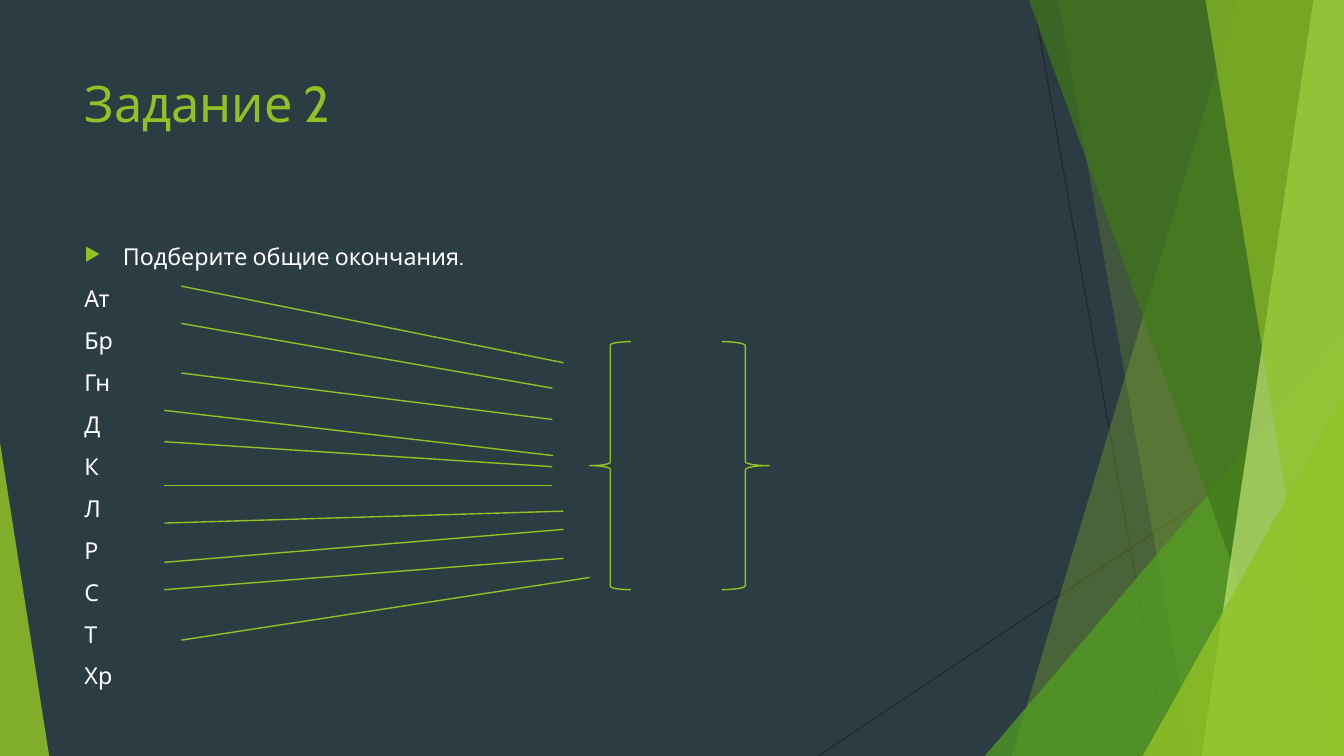
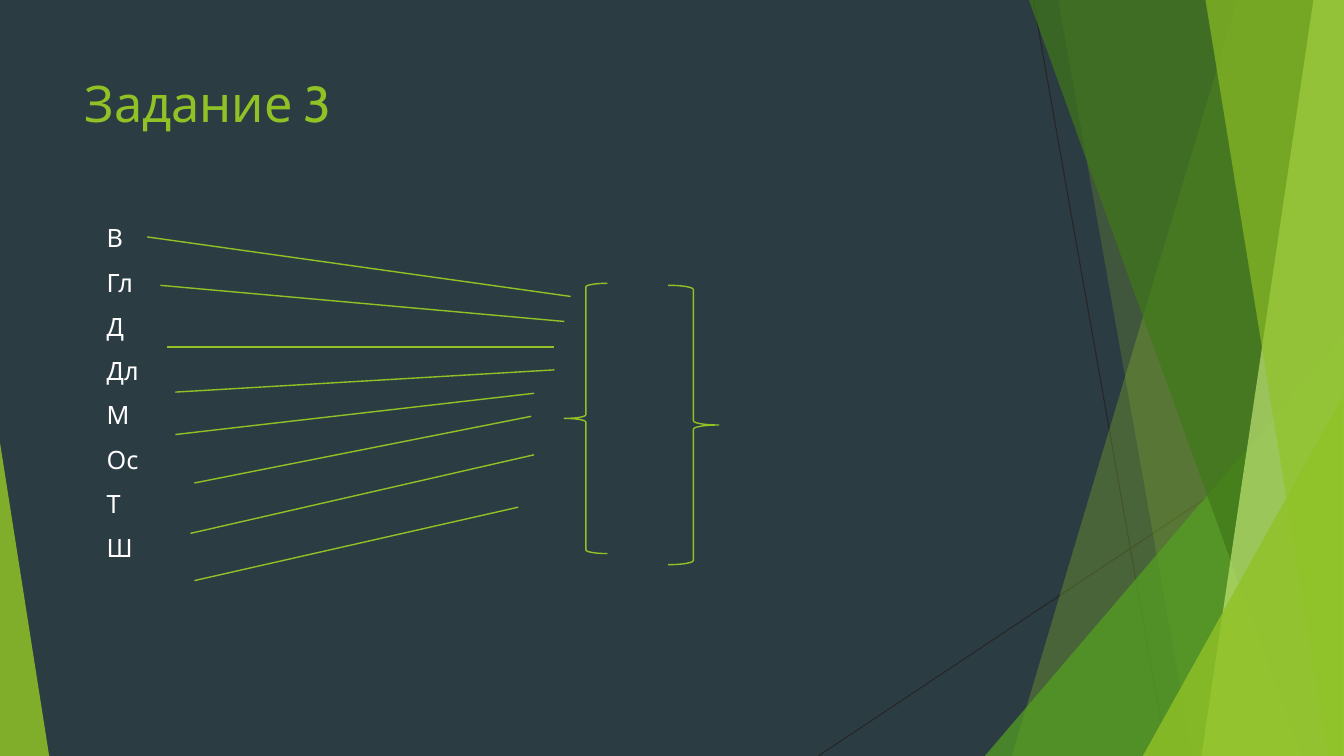
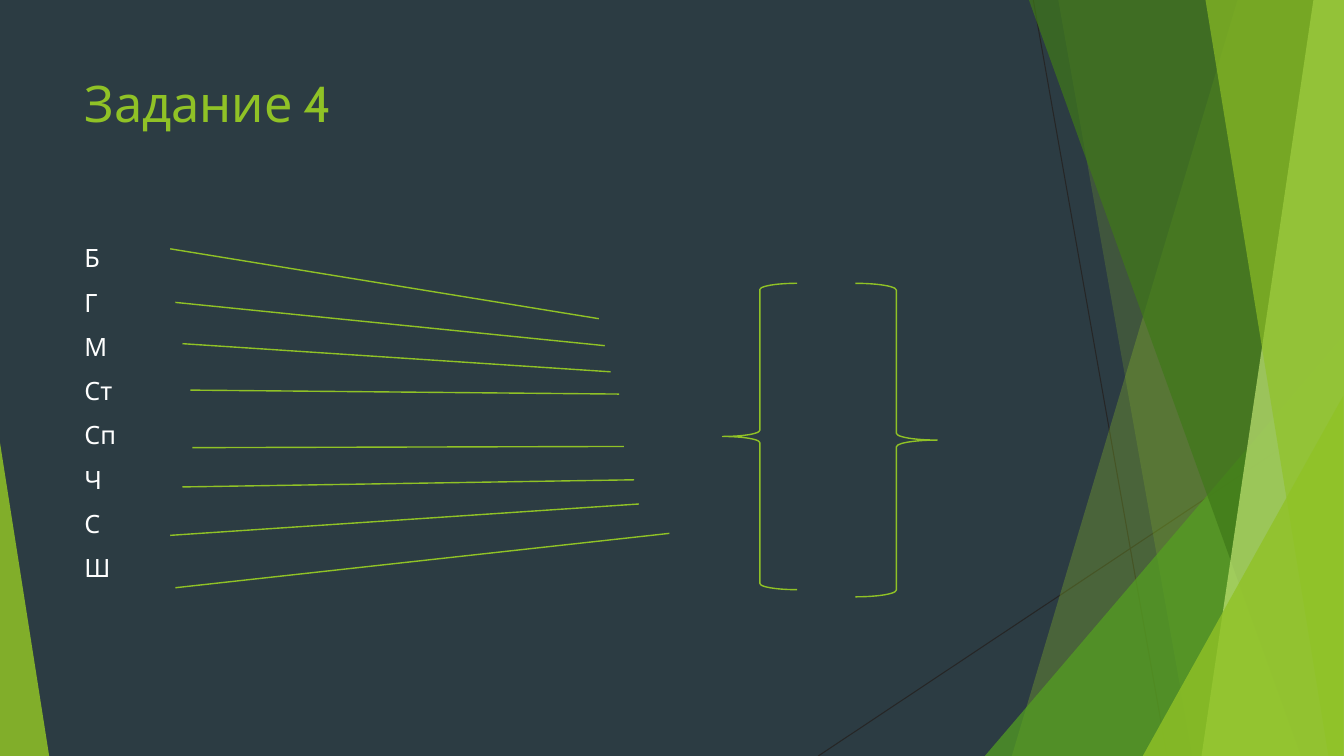
from lxml.etree import SubElement
from pptx import Presentation
from pptx.dml.color import RGBColor
from pptx.enum.shapes import MSO_CONNECTOR, MSO_SHAPE
from pptx.oxml.ns import qn
from pptx.util import Cm, Pt

FONT = "Cabin"
SLATE = RGBColor(0x2C, 0x3C, 0x43)
CHARCOAL = RGBColor(0x26, 0x26, 0x26)
WHITE = RGBColor(0xFF, 0xFF, 0xFF)
LIME = RGBColor(0x90, 0xC2, 0x26)
GREEN = RGBColor(0x54, 0xA0, 0x21)
FOREST = RGBColor(0x3F, 0x78, 0x19)
PALE_LIME = RGBColor(0xC0, 0xE4, 0x74)

WIDTH, HEIGHT = 33.87, 19.05

# Background rays: x1, y1, x2, y2
RAYS = [(26.04, 0, 29.41, HEIGHT), (WIDTH, 10.24, 20.62, HEIGHT)]

# Background facets, back to front: geometry, colour, opacity in percent.
# Two numbers: the top and bottom x of a band that runs to the right edge.
# Five numbers: left, top, width, height and apex position of a triangle.
FACETS = [
    ((31.19, 25.5), LIME, 30),
    ((26.67, 30.05), LIME, 20),
    ((24.82, 8.46, 9.04, 10.59, 1), GREEN, 72),
    ((25.93, 32.79), FOREST, 70),
    ((33.1, 30.28), PALE_LIME, 70),
    ((30.38, 33.48), LIME, 65),
    ((28.8, 9.98, 5.05, 9.07, 1), LIME, 80),
    ((0, 11.15, 1.24, 7.9, 0), LIME, 85),
]

TITLE_BOX = (1.88, 1.7, 23.88, 3.66)
BODY_BOX = (1.88, 5.99, 23.88, 10.77)

# Each task: links as x1, y1, x2, y2; braces as left, top, width, height
TASKS = [
    {
        "title": "Задание 2",
        "prompt": "Подберите общие окончания.",
        "beginnings": ["Ат", "Бр", "Гн", "Д", "К", "Л", "Р", "С", "Т", "Хр"],
        "box": BODY_BOX,
        "size": 16.6,
        "links": [
            (4.57, 7.21, 14.2, 9.14),
            (4.57, 8.15, 13.92, 9.78),
            (4.57, 9.4, 13.92, 10.57),
            (4.14, 10.34, 13.94, 11.48),
            (4.14, 11.13, 13.92, 11.76),
            (4.14, 12.24, 13.92, 12.24),
            (4.14, 13.18, 14.2, 12.88),
            (4.14, 14.17, 14.2, 13.34),
            (4.14, 14.86, 14.2, 14.07),
            (4.57, 16.13, 14.86, 14.55),
        ],
        "braces": [(14.86, 8.61, 1.04, 6.25), (18.19, 8.61, 1.19, 6.25)],
    },
    {
        "title": "Задание 3",
        "prompt": None,
        "beginnings": ["В", "Гл", "Д", "Дл", "М", "Ос", "Т", "Ш"],
        "box": (2.44, 5.49, 24.84, 11.66),
        "size": 18,
        "links": [
            (3.71, 5.97, 14.38, 7.47),
            (4.04, 7.19, 14.22, 8.1),
            (4.22, 8.74, 13.97, 8.74),
            (4.42, 9.88, 13.97, 9.32),
            (4.42, 10.95, 13.46, 9.91),
            (4.9, 12.17, 13.39, 10.49),
            (4.8, 13.44, 13.46, 11.46),
            (4.9, 14.63, 13.06, 12.78),
        ],
        "braces": [(14.22, 7.14, 1.09, 6.81), (16.84, 7.19, 1.27, 7.04)],
    },
    {
        "title": "Задание 4",
        "prompt": None,
        "beginnings": ["Б", "Г", "М", "Ст", "Сп", "Ч", "С", "Ш"],
        "box": BODY_BOX,
        "size": 18,
        "links": [
            (4.29, 6.27, 15.09, 8.03),
            (4.42, 7.62, 15.24, 8.71),
            (4.6, 8.66, 15.39, 9.37),
            (4.8, 9.83, 15.6, 9.93),
            (4.85, 11.28, 15.72, 11.25),
            (4.6, 12.27, 15.98, 12.09),
            (4.29, 13.49, 16.1, 12.7),
            (4.42, 14.81, 16.87, 13.44),
        ],
        "braces": [(18.21, 7.14, 1.88, 7.72), (21.56, 7.14, 2.06, 7.9)],
    },
]


def add_text(slide, box, lines, size, color, space_before=0, bullet_first=False):
    frame = slide.shapes.add_textbox(*map(Cm, box)).text_frame
    frame.word_wrap = True
    for index, line in enumerate(lines):
        paragraph = frame.paragraphs[0] if index == 0 else frame.add_paragraph()
        paragraph.space_before = Pt(space_before)
        run = paragraph.add_run()
        run.text = line
        run.font.name = FONT
        run.font.size = Pt(size)
        run.font.color.rgb = color
        if bullet_first and index == 0:
            props = paragraph.element.get_or_add_pPr() if hasattr(paragraph, "element") else paragraph._p.get_or_add_pPr()
            props.set("marL", str(Cm(0.97)))
            props.set("indent", str(-Cm(0.97)))
            bullet_color = SubElement(props, qn("a:buClr"))
            SubElement(bullet_color, qn("a:srgbClr"), val=str(LIME))
            SubElement(props, qn("a:buSzPct"), val="80000")
            SubElement(props, qn("a:buChar"), char="▶")


def add_line(slide, ends, color, width):
    line = slide.shapes.add_connector(MSO_CONNECTOR.STRAIGHT, *map(Cm, ends))
    line.line.color.rgb = color
    line.line.width = Pt(width)
    SubElement(line.element.spPr, qn("a:effectLst"))


prs = Presentation()
prs.slide_width, prs.slide_height = Cm(WIDTH), Cm(HEIGHT)
backdrop = prs.slide_master.background.fill
backdrop.solid()
backdrop.fore_color.rgb = SLATE

for task in TASKS:
    slide = prs.slides.add_slide(prs.slide_layouts[6])

    # Background rays and facets
    for ray in RAYS:
        add_line(slide, ray, CHARCOAL, 0.75)
    for geometry, color, opacity in FACETS:
        if len(geometry) == 2:
            top_x, bottom_x = geometry
            outline = slide.shapes.build_freeform(Cm(top_x), Cm(0))
            corners = [(WIDTH, 0), (WIDTH, HEIGHT), (bottom_x, HEIGHT)]
            outline.add_line_segments([(Cm(x), Cm(y)) for x, y in corners])
            facet = outline.convert_to_shape()
        else:
            *box, apex = geometry
            facet = slide.shapes.add_shape(MSO_SHAPE.ISOSCELES_TRIANGLE, *map(Cm, box))
            facet.adjustments[0] = apex
        facet.shadow.inherit = False
        facet.line.fill.background()
        facet.fill.solid()
        facet.fill.fore_color.rgb = color
        tint = facet.element.spPr.find(qn("a:solidFill"))[0]
        SubElement(tint, qn("a:alpha"), val=str(opacity * 1000))

    # Title and word beginnings
    add_text(slide, TITLE_BOX, [task["title"]], size=36, color=LIME)
    prompt = [task["prompt"]] if task["prompt"] else []
    add_text(slide, task["box"], prompt + task["beginnings"], size=task["size"],
             color=WHITE, space_before=10, bullet_first=bool(prompt))

    # Links to the shared ending
    for link in task["links"]:
        add_line(slide, link, LIME, 1)

    # Braces around the empty place for the ending
    for kind, box in zip((MSO_SHAPE.LEFT_BRACE, MSO_SHAPE.RIGHT_BRACE), task["braces"]):
        brace = slide.shapes.add_shape(kind, *map(Cm, box))
        brace.shadow.inherit = False
        brace.fill.background()
        brace.line.color.rgb = LIME
        brace.line.width = Pt(1)

prs.save("out.pptx")
